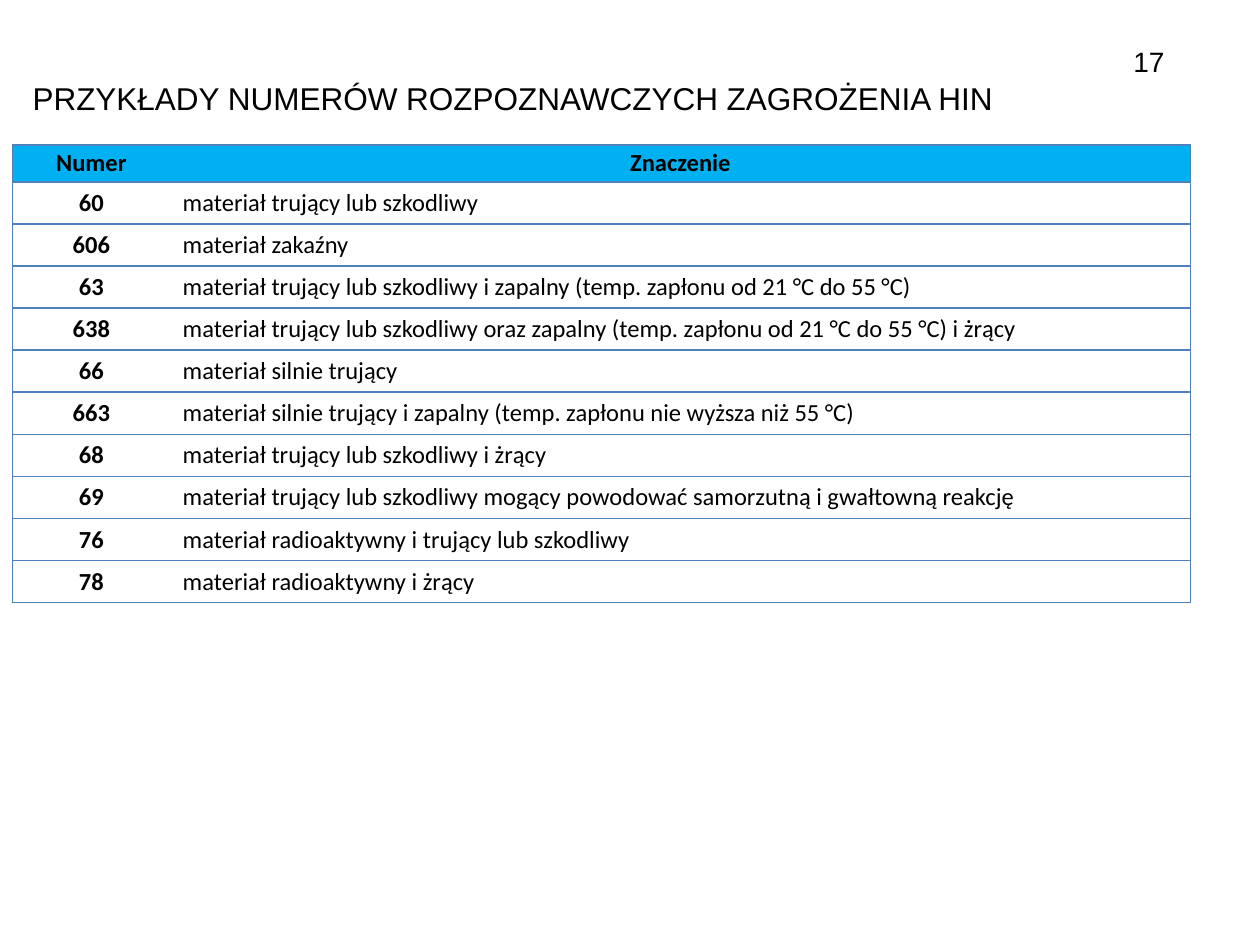
from lxml import etree
from pptx import Presentation
from pptx import util as u
from pptx.dml.color import RGBColor
from pptx.enum import text
from pptx.oxml import ns

BLACK = RGBColor(0x00, 0x00, 0x00)
WHITE = RGBColor(0xFF, 0xFF, 0xFF)
HEADER_BLUE = RGBColor(0x00, 0xB0, 0xF0)
BORDER_BLUE = RGBColor(0x4F, 0x81, 0xBD)

LEFT, CENTER, RIGHT = text.PP_ALIGN.LEFT, text.PP_ALIGN.CENTER, text.PP_ALIGN.RIGHT
TOP, MIDDLE = text.MSO_ANCHOR.TOP, text.MSO_ANCHOR.MIDDLE

HEADINGS = ("Numer", "Znaczenie")
HAZARDS = [
    ("60", "materiał trujący lub szkodliwy"),
    ("606", "materiał zakaźny"),
    ("63", "materiał trujący lub szkodliwy i zapalny (temp. zapłonu od 21 °C do 55 °C)"),
    ("638", "materiał trujący lub szkodliwy oraz zapalny "
            "(temp. zapłonu od 21 °C do 55 °C) i żrący"),
    ("66", "materiał silnie trujący"),
    ("663", "materiał silnie trujący i zapalny (temp. zapłonu nie wyższa niż 55 °C)"),
    ("68", "materiał trujący lub szkodliwy i żrący"),
    ("69", "materiał trujący lub szkodliwy mogący powodować samorzutną i gwałtowną reakcję"),
    ("76", "materiał radioaktywny i trujący lub szkodliwy"),
    ("78", "materiał radioaktywny i żrący"),
]


def write_text(frame, content, font="Arial", size=18, bold=False, align=LEFT):
    paragraph = frame.paragraphs[0]
    paragraph.alignment = align
    run = paragraph.add_run()
    run.text = content
    run.font.name = font
    run.font.size = u.Pt(size)
    run.font.bold = bold
    run.font.color.rgb = BLACK


def set_borders(cell, visible):
    """Draw the sides named in visible (out of L, R, T, B) and clear the others."""
    properties = cell._tc.get_or_add_tcPr()
    for side in "LRTB":
        line = etree.SubElement(properties, ns.qn(f"a:ln{side}"), w=str(u.Pt(1)))
        if side in visible:
            fill = etree.SubElement(line, ns.qn("a:solidFill"))
            etree.SubElement(fill, ns.qn("a:srgbClr"), val=str(BORDER_BLUE))
        else:
            etree.SubElement(line, ns.qn("a:noFill"))


class SlideBuilder:
    table_font = "Calibri"
    table_size = 14

    def __init__(self, slide):
        self.slide = slide

    def text_box(self, content, left, top, width, height, anchor=TOP, **style):
        shape = self.slide.shapes.add_textbox(
            u.Inches(left), u.Inches(top), u.Inches(width), u.Inches(height))
        shape.text_frame.word_wrap = True
        shape.text_frame.vertical_anchor = anchor
        write_text(shape.text_frame, content, **style)

    def table(self, rows, left, top, widths, header_height, row_height):
        heights = [header_height] + [row_height] * (len(rows) - 1)
        table = self.slide.shapes.add_table(
            len(rows), len(widths), u.Inches(left), u.Inches(top),
            u.Inches(sum(widths)), u.Inches(sum(heights))).table
        for column, width in zip(table.columns, widths):
            column.width = u.Inches(width)
        for row_index, values in enumerate(rows):
            table.rows[row_index].height = u.Inches(heights[row_index])
            for column_index, value in enumerate(values):
                self.cell(table.cell(row_index, column_index), value,
                          header=row_index == 0, number=column_index == 0)

    def cell(self, cell, value, header, number):
        set_borders(cell, "LTB" if number else "RTB")
        cell.fill.solid()
        cell.fill.fore_color.rgb = HEADER_BLUE if header else WHITE
        cell.vertical_anchor = MIDDLE
        if header:
            cell.margin_left = cell.margin_right = u.Inches(0.06)
            cell.margin_top = cell.margin_bottom = u.Inches(0.03)
        strong = header or number
        write_text(cell.text_frame, value, font=self.table_font, size=self.table_size,
                   bold=strong, align=CENTER if strong else LEFT)


def main():
    presentation = Presentation()
    presentation.slide_width = u.Inches(10)
    presentation.slide_height = u.Inches(7.5)
    builder = SlideBuilder(presentation.slides.add_slide(presentation.slide_layouts[6]))

    # Title and page number
    builder.text_box("PRZYKŁADY NUMERÓW ROZPOZNAWCZYCH ZAGROŻENIA HIN",
                     0.16, 0.58, 8.12, 0.73)
    builder.text_box("17", 7, 0.23, 2.34, 0.52, anchor=MIDDLE, size=16, align=RIGHT)

    # Hazard numbers and their meanings
    builder.table([HEADINGS] + HAZARDS, 0.1, 1.15, widths=(1.25, 8.1),
                  header_height=0.29, row_height=0.33)

    presentation.save("out.pptx")


if __name__ == "__main__":
    main()
